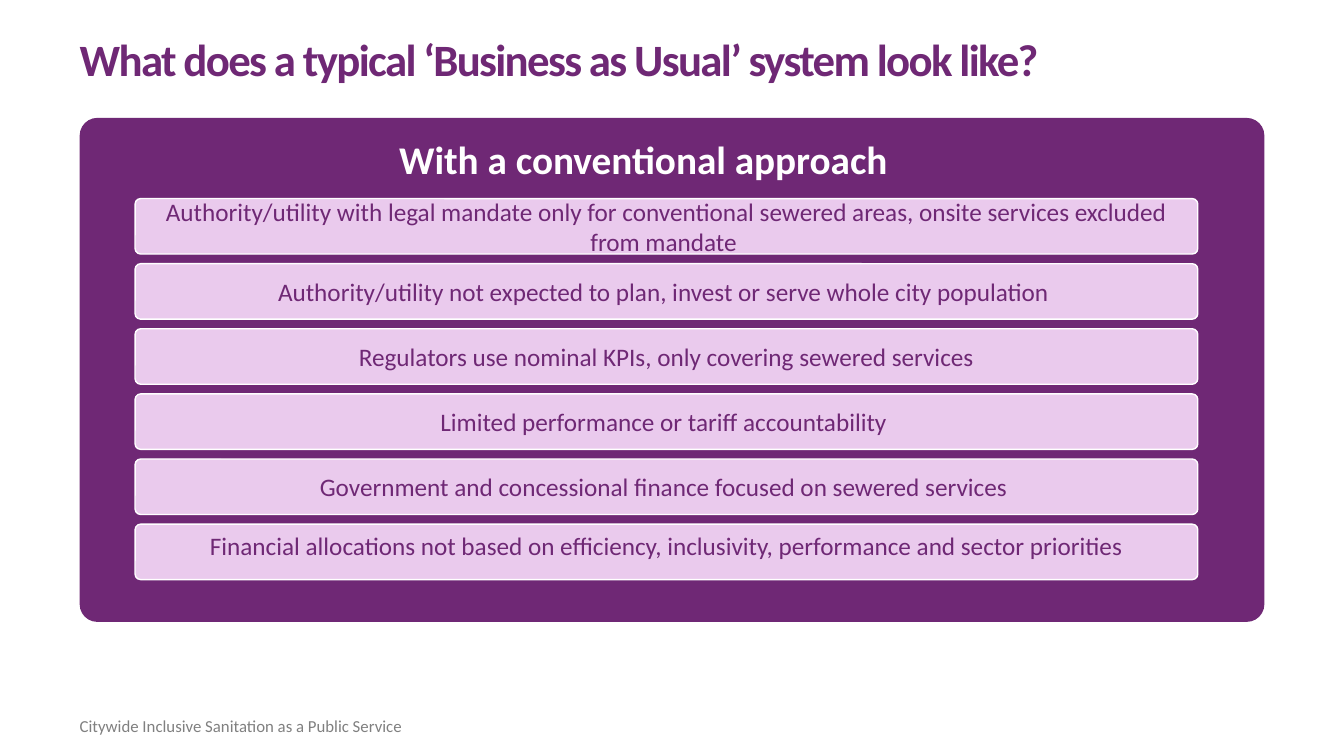
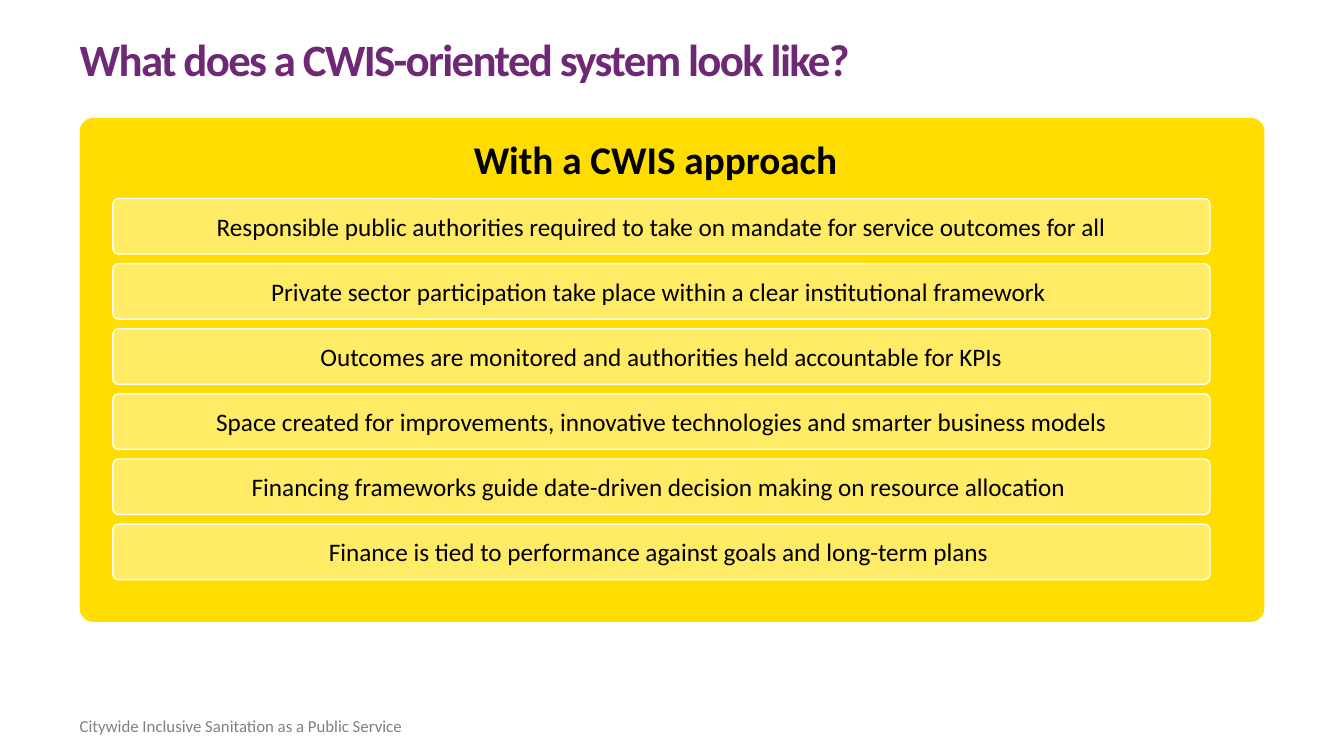
import pptx
import pptx.dml.color
import pptx.enum.shapes
import pptx.enum.text
import pptx.util

Inches = pptx.util.Inches
Pt = pptx.util.Pt
ALIGN = pptx.enum.text.PP_ALIGN
ANCHOR = pptx.enum.text.MSO_ANCHOR

PURPLE, LILAC = "6F2875", "EACAED"
YELLOW, PALE_YELLOW = "FFDD00", "FFEB66"
WHITE, BLACK, GREY = "FFFFFF", "000000", "808080"

FOOTER = "Citywide Inclusive Sanitation as a Public Service"
MARGIN = 0.79
FIRST_BAR_TOP, LAST_BAR_TOP, BAR_HEIGHT = 1.97, 5.2, 0.55


def color(hex_text):
    return pptx.dml.color.RGBColor.from_string(hex_text)


def write(shape, text, *, size, fill, bold=False, align=ALIGN.LEFT, anchor=ANCHOR.TOP,
          inset=0, line_spacing=None, tracking=None):
    """Put one formatted paragraph in a shape; tracking is in points."""
    frame = shape.text_frame
    frame.word_wrap = True
    frame.vertical_anchor = anchor
    frame.margin_left = frame.margin_right = Inches(inset)
    frame.margin_top = frame.margin_bottom = Inches(inset)
    paragraph = frame.paragraphs[0]
    paragraph.alignment = align
    if line_spacing is not None:
        paragraph.line_spacing = line_spacing
    run = paragraph.add_run()
    run.text = text
    run.font.name = "Calibri"
    run.font.size = Pt(size)
    run.font.bold = bold
    run.font.color.rgb = color(fill)
    if tracking is not None:
        run.font._element.set("spc", str(round(tracking * 100)))


class Deck:
    def __init__(self):
        self.presentation = pptx.Presentation()
        self.presentation.slide_width = Inches(13.33)
        self.presentation.slide_height = Inches(7.5)
        self.slide = None

    def add_slide(self, title):
        """Start a slide with the shared footer and title."""
        self.slide = self.presentation.slides.add_slide(self.presentation.slide_layouts[6])
        self.text(MARGIN, 7.1, 7.42, 0.38, FOOTER, size=12, fill=GREY)
        self.text(MARGIN, 0.4, 10.46, 0.57, title, size=32, fill=PURPLE, bold=True,
                  line_spacing=0.85, tracking=-1.2)

    def text(self, left, top, width, height, text, **style):
        box = self.slide.shapes.add_textbox(
            Inches(left), Inches(top), Inches(width), Inches(height))
        write(box, text, **style)

    def rounded(self, left, top, width, height, fill, corner, line=None):
        shape = self.slide.shapes.add_shape(
            pptx.enum.shapes.MSO_SHAPE.ROUNDED_RECTANGLE,
            Inches(left), Inches(top), Inches(width), Inches(height))
        shape.adjustments[0] = corner
        shape.shadow.inherit = False
        shape.fill.solid()
        shape.fill.fore_color.rgb = color(fill)
        if line:
            shape.line.color.rgb = color(line)
            shape.line.width = Pt(1)
        else:
            shape.line.fill.background()
        return shape

    def panel(self, fill, corner, heading, heading_left, heading_width, heading_fill):
        self.rounded(MARGIN, 1.17, 11.75, 5, fill, corner)
        self.text(heading_left, 1.33, heading_width, 0.55, heading, size=28,
                  fill=heading_fill, bold=True, align=ALIGN.CENTER, anchor=ANCHOR.MIDDLE,
                  inset=0.13, line_spacing=0.9)

    def bars(self, left, width, fill, text_fill, statements, last_spacing=None):
        """Stack one bar per statement, evenly from first to last top."""
        last = len(statements) - 1
        pitch = (LAST_BAR_TOP - FIRST_BAR_TOP) / last
        for index, statement in enumerate(statements):
            bar = self.rounded(left, FIRST_BAR_TOP + index * pitch, width, BAR_HEIGHT,
                               fill, 0.1, line=WHITE)
            write(bar, statement, size=18, fill=text_fill, align=ALIGN.CENTER,
                  anchor=ANCHOR.MIDDLE, inset=0.1,
                  line_spacing=last_spacing if index == last else None)


def main():
    deck = Deck()

    deck.add_slide("What does a typical ‘Business as Usual’ system look like?")
    deck.panel(PURPLE, 0.035, "With a conventional approach", 3.51, 5.74, WHITE)
    deck.bars(1.34, 10.54, LILAC, PURPLE, [
        "Authority/utility with legal mandate only for conventional sewered areas, "
        "onsite services excluded from mandate ",
        "Authority/utility not expected to plan, invest or serve whole city population ",
        "Regulators use nominal KPIs, only covering sewered services",
        "Limited performance or tariff accountability ",
        "Government and concessional finance focused on sewered services ",
        "Financial allocations not based on efficiency, inclusivity, performance "
        "and sector priorities",
    ], last_spacing=Pt(13))

    deck.add_slide("What does a CWIS-oriented system look like?")
    deck.panel(YELLOW, 0.027, "With a CWIS approach", MARGIN, 11.42, BLACK)
    deck.bars(1.12, 10.88, PALE_YELLOW, BLACK, [
        "Responsible public authorities required to take on mandate for service "
        "outcomes for all",
        "Private sector participation take place within a clear institutional framework ",
        "Outcomes are monitored and authorities held accountable for KPIs",
        "Space created for improvements, innovative technologies and smarter "
        "business models",
        "Financing frameworks guide date-driven decision making on resource allocation ",
        "Finance is tied to performance against goals and long-term plans ",
    ])

    deck.presentation.save("out.pptx")


if __name__ == "__main__":
    main()
